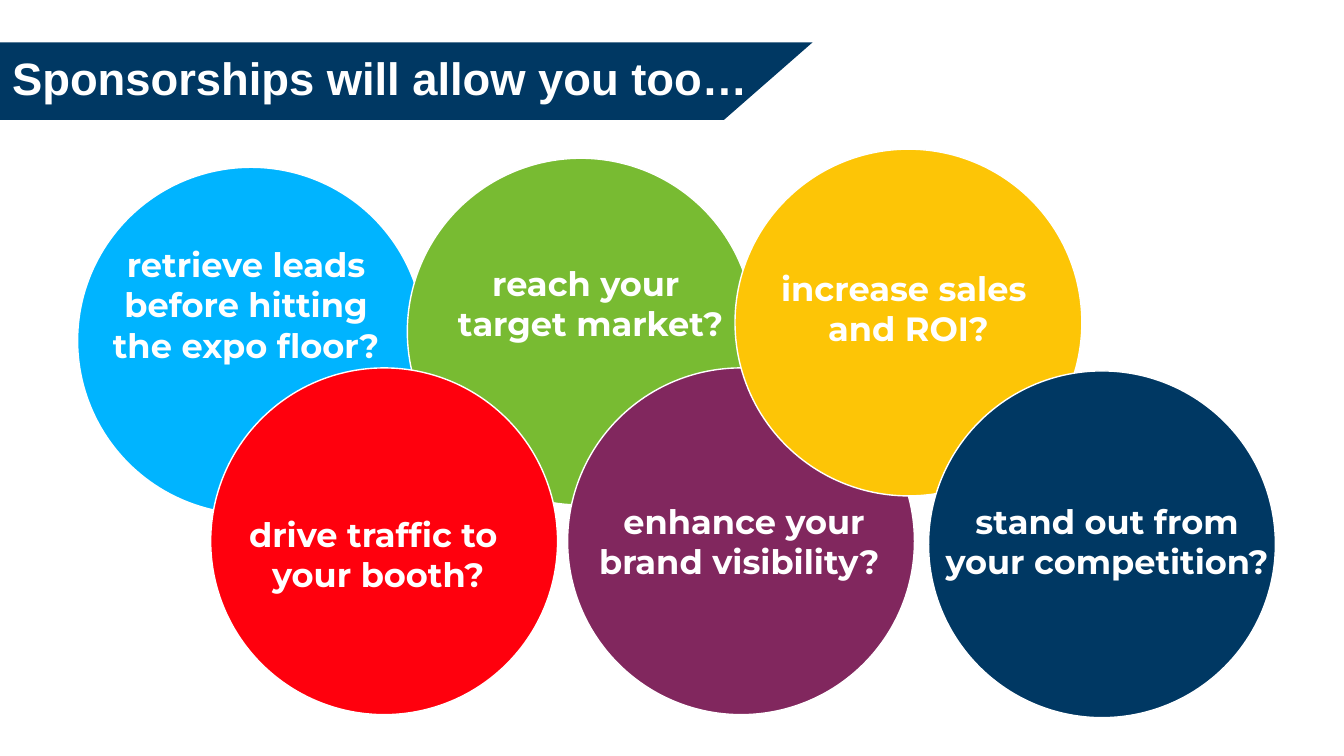
from pptx import Presentation
from pptx.dml.color import RGBColor
from pptx.enum import shapes, text
from pptx.util import Inches, Pt

COLORS = {
    "white": "FFFFFF",
    "navy": "003863",
    "sky": "00B4FF",
    "green": "78BB32",
    "red": "FF000D",
    "plum": "81275E",
    "gold": "FDC506",
}
DIAMETER = 3.44
CIRCLES = [
    (0.77, 1.66, "sky"),
    (4.04, 1.57, "green"),
    (2.09, 3.65, "red"),
    (5.63, 3.65, "plum"),
    (7.29, 1.48, "gold"),
    (9.21, 3.68, "navy"),
]
BENEFITS = [
    (1.02, 2.37, 2.84, 1.31, ["retrieve leads before hitting the expo floor?"]),
    (1.24, 5.05, 5.02, 0.91, ["drive traffic to ", "your booth?"]),
    (4.04, 2.56, 3.54, 0.91, ["reach your", " target market?"]),
    (5.61, 4.92, 3.54, 0.91, ["enhance your", "brand visibility? "]),
    (7.24, 2.61, 3.54, 0.91, ["increase sales ", "and ROI?"]),
    (9.21, 4.92, 3.54, 0.91, ["stand out from your competition?"]),
]


def color(name):
    return RGBColor.from_string(COLORS[name])


def set_font(p, name, size):
    p.font.name = name
    p.font.size = Pt(size)
    p.font.bold = True
    p.font.color.rgb = color("white")


def add_banner(s, x, y, w, h):
    slant = 0.88
    builder = s.shapes.build_freeform(Inches(x), Inches(y))
    corners = [(x + w, y), (x + w - slant, y + h), (x, y + h)]
    builder.add_line_segments([(Inches(cx), Inches(cy)) for cx, cy in corners])
    banner = builder.convert_to_shape()
    banner.shadow.inherit = False
    banner.fill.solid()
    banner.fill.fore_color.rgb = color("navy")
    banner.line.fill.background()

    title = s.shapes.title
    banner._element.addnext(title._element)
    title.left, title.top = Inches(x + 0.04), Inches(y + 0.13)
    title.width, title.height = Inches(7.69), Inches(0.5)
    tf = title.text_frame
    tf.text = "Sponsorships will allow you too…"
    tf.auto_size = text.MSO_AUTO_SIZE.NONE
    tf.vertical_anchor = text.MSO_ANCHOR.MIDDLE
    p = tf.paragraphs[0]
    p.alignment = text.PP_ALIGN.LEFT
    p.line_spacing = 0.9
    set_font(p, "Arial", 32.4)


def add_circle(s, x, y, fill):
    sp = s.shapes.add_shape(
        shapes.MSO_SHAPE.OVAL, Inches(x), Inches(y), Inches(DIAMETER), Inches(DIAMETER)
    )
    sp.shadow.inherit = False
    sp.fill.solid()
    sp.fill.fore_color.rgb = color(fill)
    sp.line.color.rgb = color("white")
    sp.line.width = Pt(1)


def add_benefit(s, x, y, w, h, lines):
    tf = s.shapes.add_textbox(Inches(x), Inches(y), Inches(w), Inches(h)).text_frame
    tf.word_wrap = True
    tf.auto_size = text.MSO_AUTO_SIZE.SHAPE_TO_FIT_TEXT
    tf.text = "\n".join(lines)
    for p in tf.paragraphs:
        p.alignment = text.PP_ALIGN.CENTER
        set_font(p, "Montserrat", 24)


def main():
    prs = Presentation()
    prs.slide_width, prs.slide_height = Inches(13.33), Inches(7.5)
    s = prs.slides.add_slide(prs.slide_layouts.get_by_name("Title Only"))
    add_banner(s, -0.02, 0.42, 8.08, 0.77)
    for circle in CIRCLES:
        add_circle(s, *circle)
    for benefit in BENEFITS:
        add_benefit(s, *benefit)
    prs.save("out.pptx")


if __name__ == "__main__":
    main()
